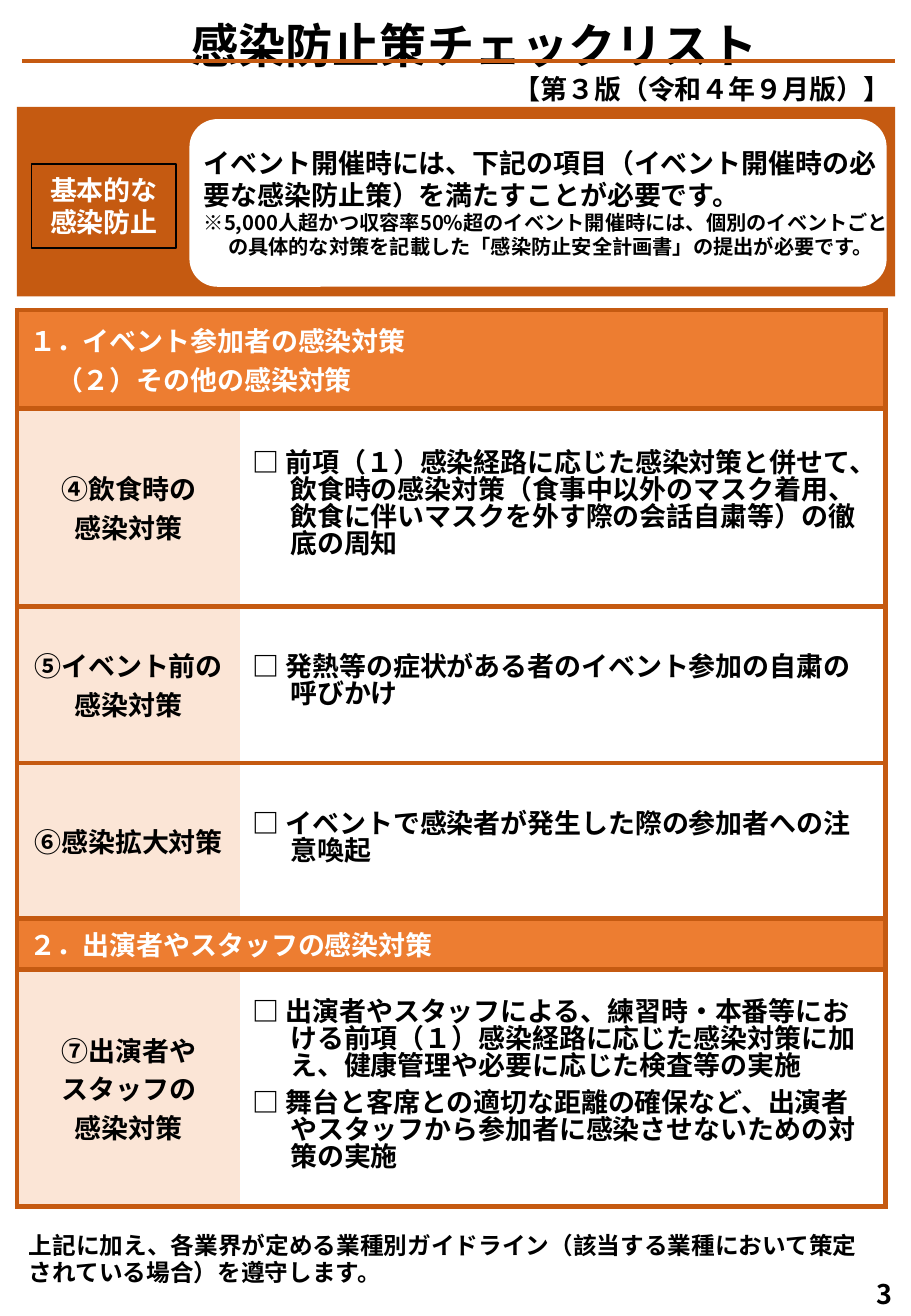
from lxml import etree
from pptx import Presentation
from pptx import util as u
from pptx.dml.color import RGBColor
from pptx.enum import shapes, text
from pptx.oxml import ns

RUST, ORANGE, PEACH = "C55A11", "ED7D31", "FBE5D6"
WHITE, BLACK = "FFFFFF", "000000"
LEFT, MID = text.PP_ALIGN.LEFT, text.PP_ALIGN.CENTER
TOP, CENTER = text.MSO_ANCHOR.TOP, text.MSO_ANCHOR.MIDDLE
RECT, ROUND = shapes.MSO_SHAPE.RECTANGLE, shapes.MSO_SHAPE.ROUNDED_RECTANGLE

BANDS = {0: ["１．イベント参加者の感染対策", "　（２）その他の感染対策"],
         4: ["２．出演者やスタッフの感染対策"]}
CHECKS = {
    1: (["④飲食時の", "感染対策"],
        ["□ 前項（１）感染経路に応じた感染対策と併せて、飲食時の感染対策（食事中以外のマスク着用、飲食に伴いマスクを外す際の会話自粛等）の徹底の周知"]),
    2: (["⑤イベント前の感染対策"],
        ["□ 発熱等の症状がある者のイベント参加の自粛の呼びかけ"]),
    3: (["⑥感染拡大対策"],
        ["□ イベントで感染者が発生した際の参加者への注意喚起"]),
    5: (["⑦出演者や", "スタッフの", "感染対策"],
        ["□ 出演者やスタッフによる、練習時・本番等における前項（１）感染経路に応じた感染対策に加え、健康管理や必要に応じた検査等の実施",
         "□ 舞台と客席との適切な距離の確保など、出演者やスタッフから参加者に感染させないための対策の実施"]),
}


def paint(fill, hue):
    if hue:
        fill.solid()
        fill.fore_color.rgb = RGBColor.from_string(hue)
    else:
        fill.background()


class Sheet:
    """Holds the slide and its style, with one method per kind of element."""

    font = "Noto Sans CJK JP"

    def __init__(self, deck):
        self.slide = deck.slides.add_slide(deck.slide_layouts[5])
        self.shapes = self.slide.shapes

    def style(self, para, size=16, hue=BLACK, font=font, align=LEFT,
              lead=None, after=0, hang=0):
        para.alignment = align
        para.space_before, para.space_after = u.Pt(0), u.Pt(after)
        if lead:
            para.line_spacing = u.Pt(lead)
        if hang:
            props = para._p.get_or_add_pPr()
            props.set("marL", str(u.Inches(hang)))
            props.set("indent", str(-u.Inches(hang)))
        for run in para.runs:
            run.font.size, run.font.bold = u.Pt(size), True
            paint(run.font.fill, hue)
            run.font.name = font
            latin = run._r.get_or_add_rPr().find(ns.qn("a:latin"))
            latin.addnext(etree.Element(ns.qn("a:ea"), typeface=self.font))

    def words(self, frame, lines, **look):
        frame.text = "\n".join(lines)
        for para in frame.paragraphs:
            self.style(para, **look)

    def frame(self, frame, lines, anchor=TOP, **look):
        frame.word_wrap = True
        frame.auto_size = text.MSO_AUTO_SIZE.NONE
        frame.vertical_anchor = anchor
        self.words(frame, lines, **look)

    def title(self, line, box, **look):
        head = self.shapes.title
        head.left, head.top, head.width, head.height = map(u.Inches, box)
        self.frame(head.text_frame, [line], **look)

    def label(self, lines, box, **look):
        label = self.shapes.add_textbox(*map(u.Inches, box))
        self.frame(label.text_frame, lines, **look)
        return label.text_frame

    def block(self, kind, box, fill=None, line=None):
        shape = self.shapes.add_shape(kind, *map(u.Inches, box))
        shape.shadow.inherit = False
        paint(shape.fill, fill)
        paint(shape.line.fill, line)
        if line:
            shape.line.width = u.Pt(1)
        return shape

    def rule(self, left, right, top):
        rule = self.shapes.add_connector(
            shapes.MSO_CONNECTOR.STRAIGHT, *map(u.Inches, (left, top, right, top)))
        paint(rule.line.fill, RUST)
        rule.line.width = u.Pt(2.25)
        etree.SubElement(rule._element.spPr, ns.qn("a:effectLst"))

    def table(self, box, cols, rows):
        grid = self.shapes.add_table(len(rows), len(cols), *map(u.Inches, box)).table
        grid.first_row = grid.horz_banding = False
        for col, width in zip(grid.columns, cols):
            col.width = u.Inches(width)
        for row, height in zip(grid.rows, rows):
            row.height = u.Inches(height)
        return grid

    def cell(self, cell, lines, fill, sides, **look):
        cell.vertical_anchor = CENTER
        paint(cell.fill, fill)
        self.words(cell.text_frame, lines, **look)
        props = cell._tc.get_or_add_tcPr()
        for spot, side in enumerate("LRTB"):
            edge = etree.Element(ns.qn("a:ln" + side), w=str(u.Pt(3)))
            if side in sides:
                solid = etree.SubElement(edge, ns.qn("a:solidFill"))
                etree.SubElement(solid, ns.qn("a:srgbClr"), val=RUST)
            else:
                etree.SubElement(edge, ns.qn("a:noFill"))
            props.insert(spot, edge)


def main():
    deck = Presentation()
    deck.slide_width, deck.slide_height = u.Inches(7.5), u.Inches(10.83)
    sheet = Sheet(deck)

    sheet.title("感染防止策チェックリスト", (0.2, 0.08, 7.41, 0.57),
                size=28, align=MID, lead=34)
    sheet.rule(0.18, 7.37, 0.5)
    sheet.label(["【第３版（令和４年９月版）】"], (4.13, 0.55, 3.35, 0.37), lead=19)

    grid = sheet.table((0.14, 2.55, 7.15, 7.38), (1.84, 5.31),
                       (0.81, 1.63, 1.29, 1.28, 0.42, 1.95))
    for row, lines in BANDS.items():
        first, last = grid.cell(row, 0), grid.cell(row, 1)
        first.merge(last)
        sheet.cell(first, lines, ORANGE, "LRTB", hue=WHITE, font="Calibri")
        sheet.cell(last, [], ORANGE, "LRTB")
    for row, (label, checks) in CHECKS.items():
        sheet.cell(grid.cell(row, 0), label, PEACH, "LTB", align=MID)
        sheet.cell(grid.cell(row, 1), checks, WHITE, "RTB",
                   lead=16, after=6, hang=0.31)

    sheet.block(RECT, (0.14, 0.88, 7.23, 1.56), RUST)
    sheet.block(ROUND, (1.56, 0.98, 5.74, 1.38), WHITE)
    badge = sheet.block(RECT, (0.26, 1.35, 1.19, 0.69), line=BLACK)
    sheet.frame(badge.text_frame, ["基本的な", "感染防止"], anchor=CENTER,
                hue=WHITE, align=MID, lead=19)
    intro = sheet.label(
        ["イベント開催時には、下記の項目（イベント開催時の必要な感染防止策）を満たすことが必要です。",
         "※5,000人超かつ収容率50%超のイベント開催時には、個別のイベントごとの具体的な対策を記載した「感染防止安全計画書」の提出が必要です。"],
        (1.58, 1.16, 5.84, 1.07), lead=19)
    sheet.style(intro.paragraphs[1], size=12, lead=14.2, hang=0.2)

    sheet.label(["上記に加え、各業界が定める業種別ガイドライン（該当する業種において策定されている場合）を遵守します。"],
                (0.14, 10.09, 7.07, 0.55), anchor=CENTER, size=14, lead=16)
    sheet.label(["3"], (7.08, 10.46, 0.41, 0.37), anchor=CENTER, align=MID, lead=19)
    deck.save("out.pptx")


if __name__ == "__main__":
    main()
